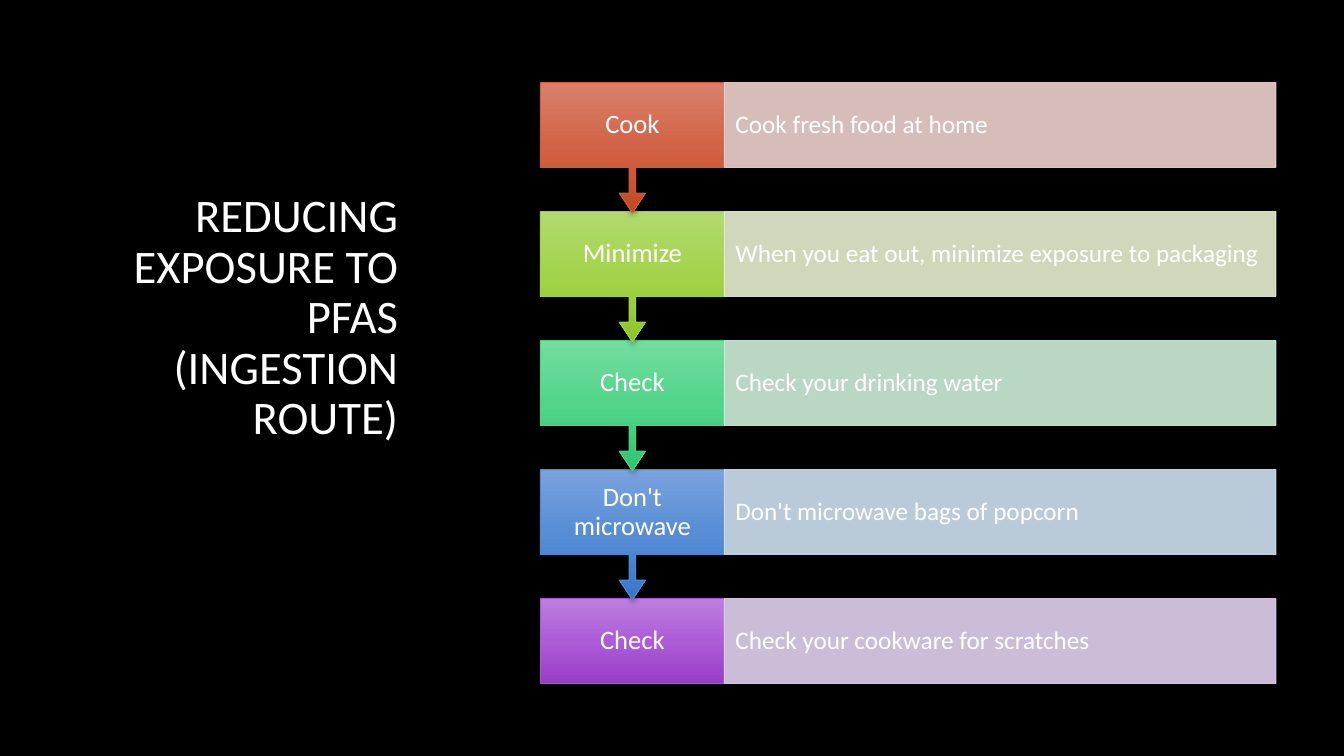
from lxml import etree
from copy import deepcopy
from pptx import Presentation
from pptx import util as u
from pptx.dml.color import RGBColor
from pptx.enum import shapes, text
from pptx.oxml.ns import qn

STEPS = [  # label, gradient, label outline, description tint, description
    ("Cook", ("D9806C", "D26245", "C34822"), "D15B37", "EED2CE",
     "Cook fresh food at home"),
    ("Minimize", ("B2DA70", "A3D34A", "8FC329"), "A0D23E", "E7EFCF",
     "When you eat out, minimize exposure to packaging"),
    ("Check", ("75DC9F", "50D589", "30C472"), "46D485", "CFEFDA",
     "Check your drinking water"),
    ("Don't microwave", ("7AA2DD", "568DD6", "3776C5"), "4D89D5", "D0E1F0",
     "Don't microwave bags of popcorn"),
    ("Check", ("BC7FDF", "AD5CD8", "983DC6"), "AB54D7", "E2D1F0",
     "Check your cookware for scratches"),
]


def rgb(color):
    return RGBColor.from_string(color)


def add_child(parent, tag, **attributes):
    child = etree.SubElement(parent, qn(tag))
    for name, value in attributes.items():
        child.set(name, str(value))
    return child


class FlowSlide:
    """A slide on a grid of 0.1-inch cells; boxes are (column, row, columns, rows)."""
    CELL = u.Inches(0.1)
    FONT = "Calibri"
    INK = "FFFFFF"
    BACKGROUND = "000000"
    OPACITY = 90

    def __init__(self, presentation):
        self.slide = presentation.slides.add_slide(presentation.slide_layouts[5])
        fill = self.slide.background.fill
        fill.solid()
        fill.fore_color.rgb = rgb(self.BACKGROUND)

    def cells(self, *counts):
        return [round(count * self.CELL) for count in counts]

    def set_text(self, shape, words, size, align, anchor=text.MSO_ANCHOR.MIDDLE,
                 insets=(1, 0.5)):
        """Fill the shape with one paragraph; insets are (sides, top and bottom)."""
        frame = shape.text_frame
        frame.word_wrap = True
        frame.auto_size = text.MSO_AUTO_SIZE.NONE
        frame.vertical_anchor = anchor
        side, end = self.cells(*insets)
        frame.margin_left = frame.margin_right = side
        frame.margin_top = frame.margin_bottom = end
        paragraph = frame.paragraphs[0]
        paragraph.text = words
        paragraph.alignment = align
        paragraph.line_spacing = 0.9
        font = paragraph.font
        font.name, font.size, font.color.rgb = self.FONT, u.Pt(size), rgb(self.INK)

    def title(self, words, box):
        title = self.slide.shapes.title
        title.left, title.top, title.width, title.height = self.cells(*box)
        self.set_text(title, words, 33.3, text.PP_ALIGN.RIGHT, text.MSO_ANCHOR.BOTTOM)

    def shape(self, kind, box, outline):
        shape = self.slide.shapes.add_shape(kind, *self.cells(*box))
        shape.shadow.inherit = False
        shape.line.color.rgb = rgb(outline)
        shape.line.width = u.Pt(0.75)
        return shape

    def label(self, words, box, gradient, outline, arrow_rows=0):
        """Draw a gradient box, with an arrow below it if arrow_rows is given."""
        column, row, columns, rows = box
        height = rows + arrow_rows
        kind = (shapes.MSO_SHAPE.DOWN_ARROW_CALLOUT if arrow_rows
                else shapes.MSO_SHAPE.RECTANGLE)
        label = self.shape(kind, (column, row, columns, height), outline)
        if arrow_rows:
            for index, value in enumerate((0.05, 0.1, 0.15, rows / height)):
                label.adjustments[index] = value
        self.gradient(label.fill, gradient)
        self.soft_shadow(label)
        self.set_text(label, words, 19, text.PP_ALIGN.CENTER, insets=(1.3, 1.5))

    def gradient(self, fill, colors):
        fill.gradient()
        fill.gradient_angle = 270
        first = fill._fill._gradFill.gsLst[0]
        first.addnext(deepcopy(first))
        for index, (stop, color) in enumerate(zip(fill.gradient_stops, colors)):
            stop.position = index / (len(colors) - 1)
            stop.color.rgb = rgb(color)

    def soft_shadow(self, shape):
        effects = shape._element.spPr.find(qn("a:effectLst"))
        shadow = add_child(effects, "a:outerShdw", blurRad=u.Pt(4), dist=u.Pt(2),
                           dir=5400000, algn="ctr", rotWithShape=0)
        add_child(add_child(shadow, "a:srgbClr", val="000000"),
                  "a:alpha", val=28000)

    def description(self, words, box, tint):
        panel = self.shape(shapes.MSO_SHAPE.RECTANGLE, box, tint)
        panel.fill.solid()
        panel.fill.fore_color.rgb = rgb(tint)
        for color in panel._element.spPr.iter(qn("a:srgbClr")):
            add_child(color, "a:alpha", val=self.OPACITY * 1000)
        self.set_text(panel, words, 18, text.PP_ALIGN.LEFT, insets=(1.1, 2.5))


def main():
    presentation = Presentation()
    presentation.slide_width = u.Inches(13.33)
    presentation.slide_height = u.Inches(7.5)
    flow = FlowSlide(presentation)
    flow.title("REDUCING EXPOSURE TO PFAS (INGESTION ROUTE)", (6.4, 18.4, 34.1, 26.2))

    left, top, pitch, height = 53.6, 8.2, 12.8, 8.4
    label_width, description_width = 18.25, 54.7
    last = len(STEPS) - 1
    # The last step comes first, so each arrow tip lies over the box below it.
    for index in range(last, -1, -1):
        label, gradient, outline, tint, words = STEPS[index]
        row = top + index * pitch
        flow.label(label, (left, row, label_width, height), gradient, outline,
                   arrow_rows=4.5 if index < last else 0)
        flow.description(words, (left + label_width, row, description_width, height),
                         tint)
    presentation.save("out.pptx")


if __name__ == "__main__":
    main()
